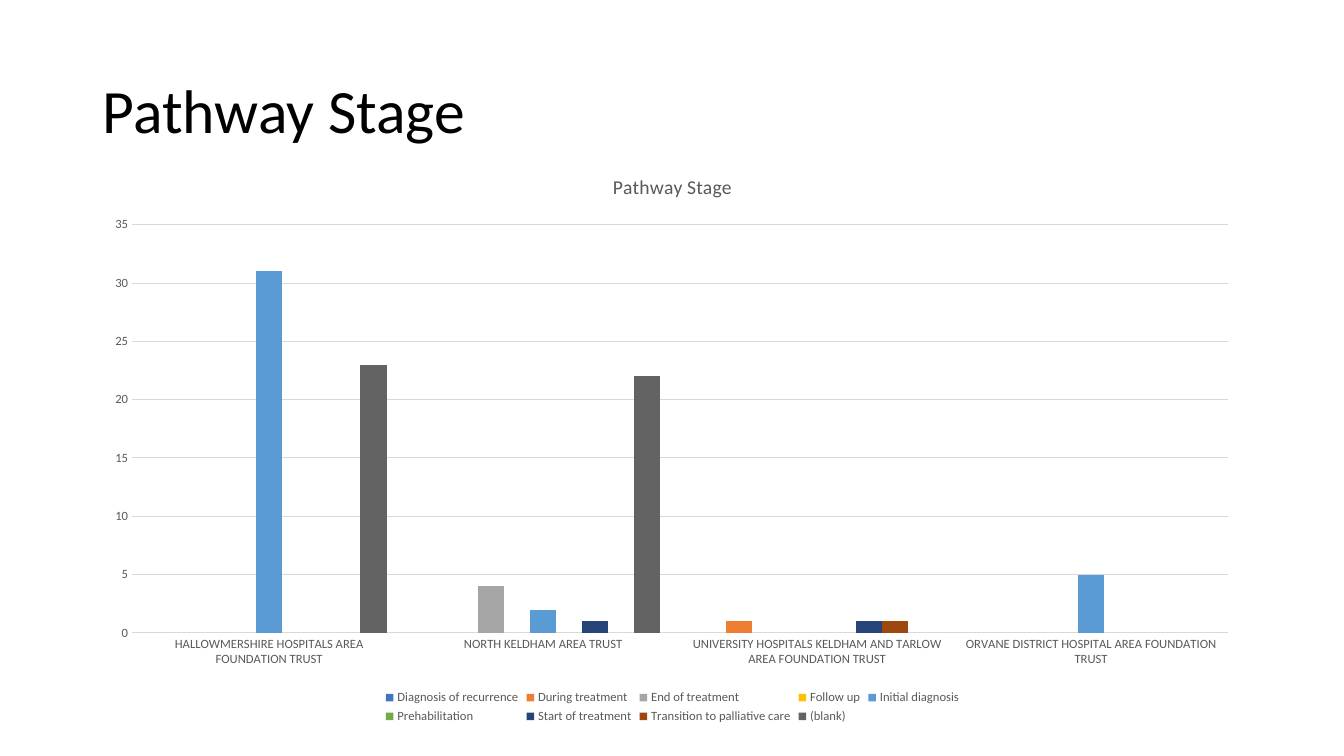
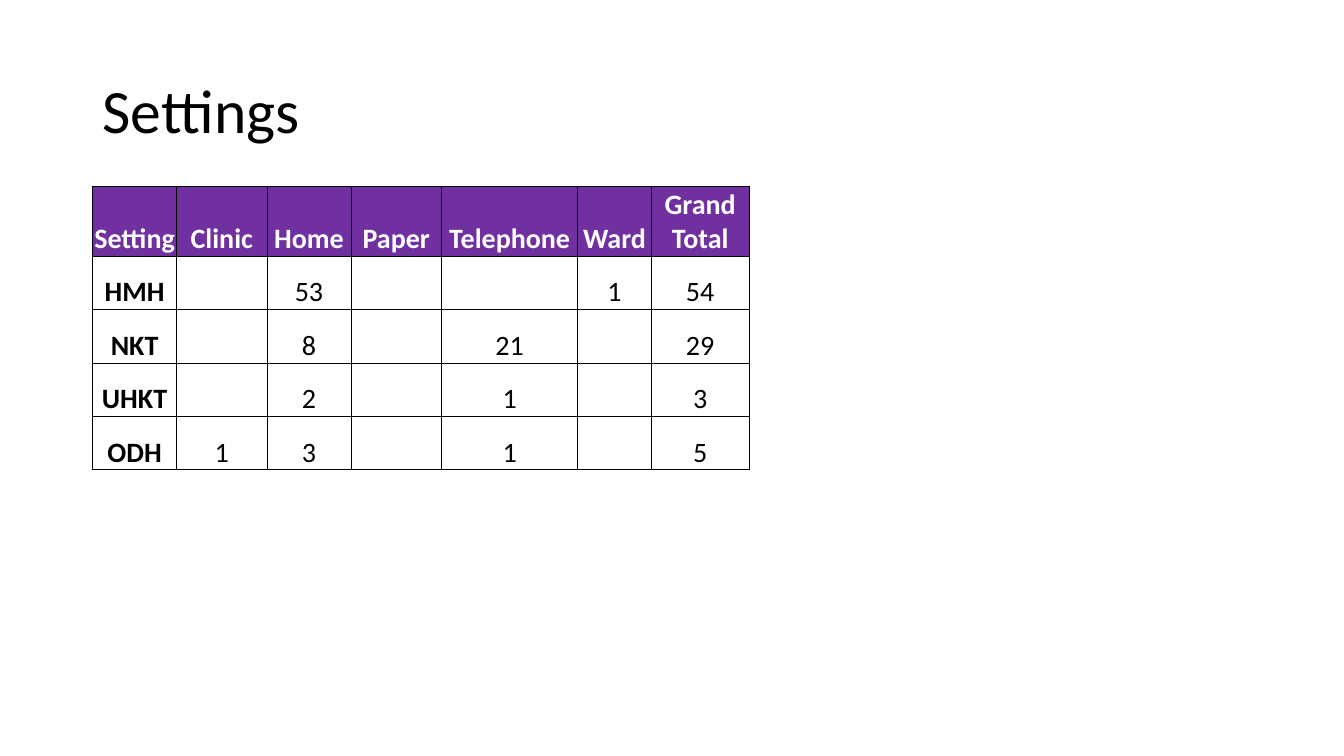
"""Build a two-slide report on patient pathway stages and settings."""
import dataclasses
import typing

import lxml.etree
import pptx
import pptx.chart.data
import pptx.dml.color
import pptx.enum.chart
import pptx.enum.text
import pptx.oxml
import pptx.oxml.ns
import pptx.util

Inches = pptx.util.Inches
Pt = pptx.util.Pt

FONT = "Calibri"
BLACK = "000000"
WHITE = "FFFFFF"
PURPLE = "7030A0"
GREY = "595959"
GRID = "D9D9D9"
LEFT = 0.92
CONTENT_WIDTH = 11.5
CHART_HEIGHT = 5.7


@dataclasses.dataclass(frozen=True)
class Stage:
    name: str
    color: str
    counts: tuple[int | None, ...] = (None, None, None, None)


@dataclasses.dataclass(frozen=True)
class Column:
    heading: str
    width: float
    values: tuple[str, ...]


TRUSTS = (
    "HALLOWMERSHIRE HOSPITALS AREA FOUNDATION TRUST",
    "NORTH KELDHAM AREA TRUST",
    "UNIVERSITY HOSPITALS KELDHAM AND TARLOW AREA FOUNDATION TRUST",
    "ORVANE DISTRICT HOSPITAL AREA FOUNDATION TRUST",
)
STAGES = (
    Stage("Diagnosis of recurrence", "4472C4"),
    Stage("During treatment", "ED7D31", (None, None, 1, None)),
    Stage("End of treatment", "A5A5A5", (None, 4, None, None)),
    Stage("Follow up", "FFC000"),
    Stage("Initial diagnosis", "5B9BD5", (31, 2, None, 5)),
    Stage("Prehabilitation", "70AD47"),
    Stage("Start of treatment", "264478", (None, 1, 1, None)),
    Stage("Transition to palliative care", "9E480E", (None, None, 1, None)),
    Stage("(blank)", "636363", (23, 22, None, None)),
)
COLUMNS = (
    Column("Setting", 0.83, ("HMH", "NKT", "UHKT", "ODH")),
    Column("Clinic", 0.9, ("", "", "", "1")),
    Column("Home", 0.83, ("53", "8", "2", "3")),
    Column("Paper", 0.9, ("", "", "", "")),
    Column("Telephone", 1.35, ("", "21", "1", "1")),
    Column("Ward", 0.73, ("1", "", "", "")),
    Column("Grand Total", 0.97, ("54", "29", "3", "5")),
)
HEADER_HEIGHT = 0.69
ROW_HEIGHT = 0.53
PLOT_LAYOUT = {
    "x": 0.39 / CONTENT_WIDTH,
    "y": 0.71 / CHART_HEIGHT,
    "w": 10.87 / CONTENT_WIDTH,
    "h": 4.05 / CHART_HEIGHT,
}


def rgb(color: str) -> pptx.dml.color.RGBColor:
    return pptx.dml.color.RGBColor.from_string(color)


def apply_format(target: typing.Any, values: dict[str, typing.Any]) -> None:
    for name, value in values.items():
        setattr(target, name, value)


def style_font(font: typing.Any, size: float, color: str, bold: bool = False) -> None:
    apply_format(font, {"name": FONT, "size": Pt(size), "bold": bold})
    font.color.rgb = rgb(color)


def add_titled_page(deck: typing.Any, title: str) -> typing.Any:
    page = deck.slides.add_slide(deck.slide_layouts[6])
    box = page.shapes.add_textbox(
        Inches(LEFT), Inches(0.4), Inches(CONTENT_WIDTH), Inches(1.45)
    )
    apply_format(box.text_frame, {
        "word_wrap": True,
        "vertical_anchor": pptx.enum.text.MSO_ANCHOR.MIDDLE,
    })
    para = box.text_frame.paragraphs[0]
    para.line_spacing = 0.9
    span = para.add_run()
    span.text = title
    style_font(span.font, 44, BLACK)
    return page


def place_plot(chart: typing.Any) -> None:
    plot_area = chart.plots[0]._element.getparent()
    for old in plot_area.findall(pptx.oxml.ns.qn("c:layout")):
        plot_area.remove(old)
    layout = lxml.etree.Element(pptx.oxml.ns.qn("c:layout"))
    manual = lxml.etree.SubElement(layout, pptx.oxml.ns.qn("c:manualLayout"))
    settings = {"layoutTarget": "inner", "xMode": "edge", "yMode": "edge", **PLOT_LAYOUT}
    for tag, value in settings.items():
        lxml.etree.SubElement(manual, pptx.oxml.ns.qn(f"c:{tag}"), val=str(value))
    plot_area.insert(0, layout)


def add_stage_chart(page: typing.Any, title: str) -> None:
    data = pptx.chart.data.CategoryChartData(number_format="General")
    data.categories = TRUSTS
    for stage in STAGES:
        data.add_series(stage.name, stage.counts)
    chart = page.shapes.add_chart(
        pptx.enum.chart.XL_CHART_TYPE.COLUMN_CLUSTERED,
        Inches(LEFT), Inches(1.52), Inches(CONTENT_WIDTH), Inches(CHART_HEIGHT), data,
    ).chart
    style_font(chart.font, 10, BLACK)
    apply_format(chart, {"has_title": True, "has_legend": True})
    span = chart.chart_title.text_frame.paragraphs[0].add_run()
    span.text = title
    style_font(span.font, 14, GREY)
    apply_format(chart.legend, {
        "position": pptx.enum.chart.XL_LEGEND_POSITION.BOTTOM,
        "include_in_layout": False,
    })
    style_font(chart.legend.font, 9, GREY)
    for axis in (chart.category_axis, chart.value_axis):
        apply_format(axis, {
            "major_tick_mark": pptx.enum.chart.XL_TICK_MARK.NONE,
            "minor_tick_mark": pptx.enum.chart.XL_TICK_MARK.NONE,
        })
        style_font(axis.tick_labels.font, 9, GREY)
        axis.format.line.fill.background()
    apply_format(chart.value_axis, {
        "minimum_scale": 0, "maximum_scale": 35, "major_unit": 5,
        "has_major_gridlines": True,
    })
    grid_line = chart.value_axis.major_gridlines.format.line
    grid_line.color.rgb = rgb(GRID)
    grid_line.width = Pt(0.75)
    plot = chart.plots[0]
    apply_format(plot, {"gap_width": 150, "overlap": 0, "vary_by_categories": False})
    for series, stage in zip(plot.series, STAGES):
        series.invert_if_negative = False
        series.format.fill.solid()
        series.format.fill.fore_color.rgb = rgb(stage.color)
    place_plot(chart)


def add_borders(cell: typing.Any) -> None:
    properties = cell._tc.get_or_add_tcPr()
    for index, side in enumerate(("lnL", "lnR", "lnT", "lnB")):
        line = lxml.etree.Element(pptx.oxml.ns.qn(f"a:{side}"), w=str(Pt(0.5)))
        fill = lxml.etree.SubElement(line, pptx.oxml.ns.qn("a:solidFill"))
        lxml.etree.SubElement(fill, pptx.oxml.ns.qn("a:srgbClr"), val=BLACK)
        properties.insert(index, line)


def fill_cell(cell: typing.Any, text: str, is_header: bool, bold: bool) -> None:
    apply_format(cell, {
        "margin_left": Inches(0.01), "margin_right": Inches(0.01),
        "margin_top": Inches(0.01), "margin_bottom": 0,
        "vertical_anchor": pptx.enum.text.MSO_ANCHOR.BOTTOM,
    })
    if is_header:
        cell.fill.solid()
        cell.fill.fore_color.rgb = rgb(PURPLE)
    else:
        cell.fill.background()
    add_borders(cell)
    if text:
        para = cell.text_frame.paragraphs[0]
        para.alignment = pptx.enum.text.PP_ALIGN.CENTER
        span = para.add_run()
        span.text = text
        style_font(span.font, 20, WHITE if is_header else BLACK, bold)


def add_settings_table(page: typing.Any) -> None:
    heights = [HEADER_HEIGHT] + [ROW_HEIGHT] * len(COLUMNS[0].values)
    table = page.shapes.add_table(
        len(heights), len(COLUMNS), Inches(LEFT), Inches(1.85),
        Inches(sum(column.width for column in COLUMNS)), Inches(sum(heights)),
    ).table
    apply_format(table, {"first_row": False, "horz_banding": False})
    for row, height in zip(table.rows, heights):
        row.height = Inches(height)
    for column_index, column in enumerate(COLUMNS):
        table.columns[column_index].width = Inches(column.width)
        for row_index, text in enumerate((column.heading, *column.values)):
            is_header = row_index == 0
            fill_cell(
                table.cell(row_index, column_index), text,
                is_header, is_header or column_index == 0,
            )


def main() -> None:
    deck = pptx.Presentation()
    apply_format(deck, {"slide_width": Inches(13.33), "slide_height": Inches(7.5)})
    add_stage_chart(add_titled_page(deck, "Pathway Stage"), "Pathway Stage")
    add_settings_table(add_titled_page(deck, "Settings"))
    deck.save("out.pptx")


if __name__ == "__main__":
    main()
